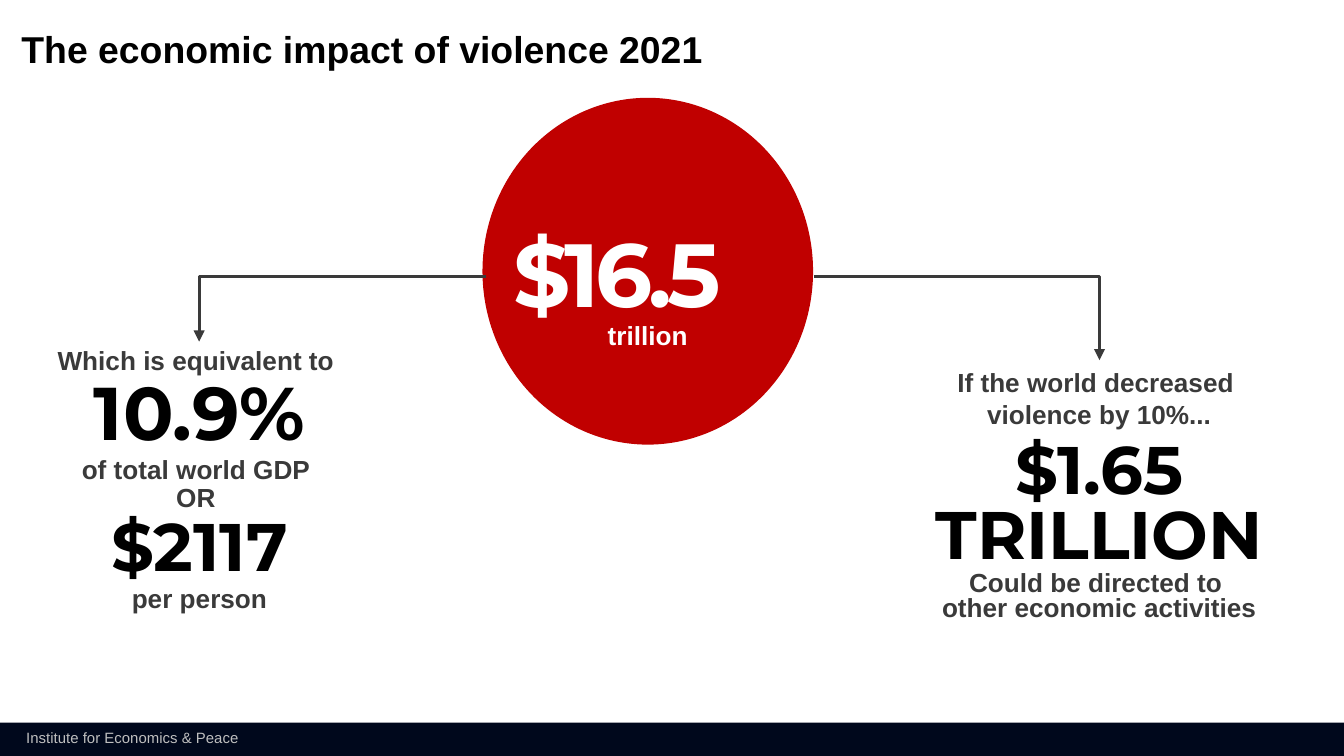
from dataclasses import dataclass

from lxml import etree
from pptx import Presentation
from pptx.dml.color import RGBColor
from pptx.enum.shapes import MSO_CONNECTOR, MSO_SHAPE as SHAPE
from pptx.enum.text import MSO_AUTO_SIZE as FIT, PP_ALIGN as ALIGN
from pptx.oxml.ns import qn
from pptx.util import Pt


@dataclass(frozen=True)
class Theme:
    sans: str = "Arial"
    display: str = "Montserrat"
    black: str = "000000"
    white: str = "FFFFFF"
    gray: str = "3A3A3A"
    pale: str = "BFBFBF"
    red: str = "C00000"
    navy: str = "00081C"
    tiny: int = 8
    body: int = 14
    title: int = 20
    large: int = 36
    share: int = 40
    hero: int = 48


T = Theme()


def body(text, color=T.gray):
    return text, T.sans, T.body, color


def figure(text, size, color=T.black):
    return text, T.display, size, color


def add_shape(s, kind, box, color):
    sp = s.shapes.add_shape(kind, *map(Pt, box))
    sp.shadow.inherit = False
    sp.fill.solid()
    sp.fill.fore_color.rgb = RGBColor.from_string(color)
    sp.line.fill.background()


def add_text(s, box, lines, align=ALIGN.CENTER, spacing=None, bold=True,
             wrap=True, inset=True, tracking=None):
    """Add one paragraph per (text, font, size, color) line."""
    tf = s.shapes.add_textbox(*map(Pt, box)).text_frame
    tf.word_wrap = wrap
    if inset:
        tf.auto_size = FIT.SHAPE_TO_FIT_TEXT
    else:
        tf.margin_left = tf.margin_top = tf.margin_right = tf.margin_bottom = 0
    for i, (text, font, size, color) in enumerate(lines):
        p = tf.add_paragraph() if i else tf.paragraphs[0]
        p.text = text
        p.alignment = align
        p.line_spacing = spacing
        r = p.runs[0]
        r.font.name, r.font.size, r.font.bold = font, Pt(size), bold
        r.font.color.rgb = RGBColor.from_string(color)
        if tracking:
            r.font._element.set("spc", str(int(tracking * 100)))


def add_elbow_arrow(s, start, end):
    """Run sideways from start, then down to an arrowhead at end."""
    line = s.shapes.add_connector(MSO_CONNECTOR.ELBOW, *map(Pt, start + end))
    line.line.width = Pt(1.5)
    line.line.color.rgb = RGBColor.from_string(T.gray)
    pr = line._element.spPr
    pr.find(qn("a:prstGeom")).set("prst", "bentConnector2")
    etree.SubElement(pr.find(qn("a:ln")), qn("a:tailEnd"), type="triangle")
    etree.SubElement(pr, qn("a:effectLst"))


def main():
    prs = Presentation()
    prs.slide_width, prs.slide_height = Pt(720), Pt(405)
    s = prs.slides.add_slide(prs.slide_layouts[6])

    # Footer
    add_shape(s, SHAPE.RECTANGLE, (0, 387.2, 720, 17.8), T.navy)
    add_text(s, (7, 386.6, 129.6, 17.3),
             [("Institute for Economics & Peace", T.sans, T.tiny, T.pale)],
             align=ALIGN.LEFT, bold=False, wrap=False)

    # Title
    add_text(s, (11.5, 16.6, 378.7, 21.6),
             [("The economic impact of violence 2021", T.sans, T.title, T.black)],
             align=ALIGN.LEFT, spacing=0.9, inset=False)

    # Total cost in the circle
    add_shape(s, SHAPE.OVAL, (258.5, 52.4, 177.1, 185.8), T.red)

    # Arrows to both sides
    add_elbow_arrow(s, (260.6, 148), (106.7, 183))
    add_elbow_arrow(s, (436.3, 148), (589, 193))

    add_text(s, (275, 123.1, 168.5, 49.7), [figure("$16.5", T.hero, T.white)],
             align=ALIGN.LEFT, spacing=0.9, inset=False, tracking=-2.5)
    add_text(s, (167, 170.6, 360, 20.9), [body("trillion", T.white)], spacing=0.8)

    # Left: equivalents
    add_text(s, (23, 183, 167.8, 151.2),
             [body("Which is equivalent to "),
              figure("10.9%", T.share),
              body("of total world GDP "),
              body("OR "),
              figure("$2117", T.large),
              body("per person")], spacing=0.9)

    # Right: possible saving
    add_text(s, (472.3, 193, 233.3, 41),
             [body("If the world decreased "), body("violence by 10%...")])
    add_text(s, (472.3, 234, 233.3, 104.4),
             [figure("$1.65 TRILLION", T.large),
              body("Could be directed to "),
              body("other economic activities")], spacing=0.8)

    prs.save("out.pptx")


if __name__ == "__main__":
    main()
